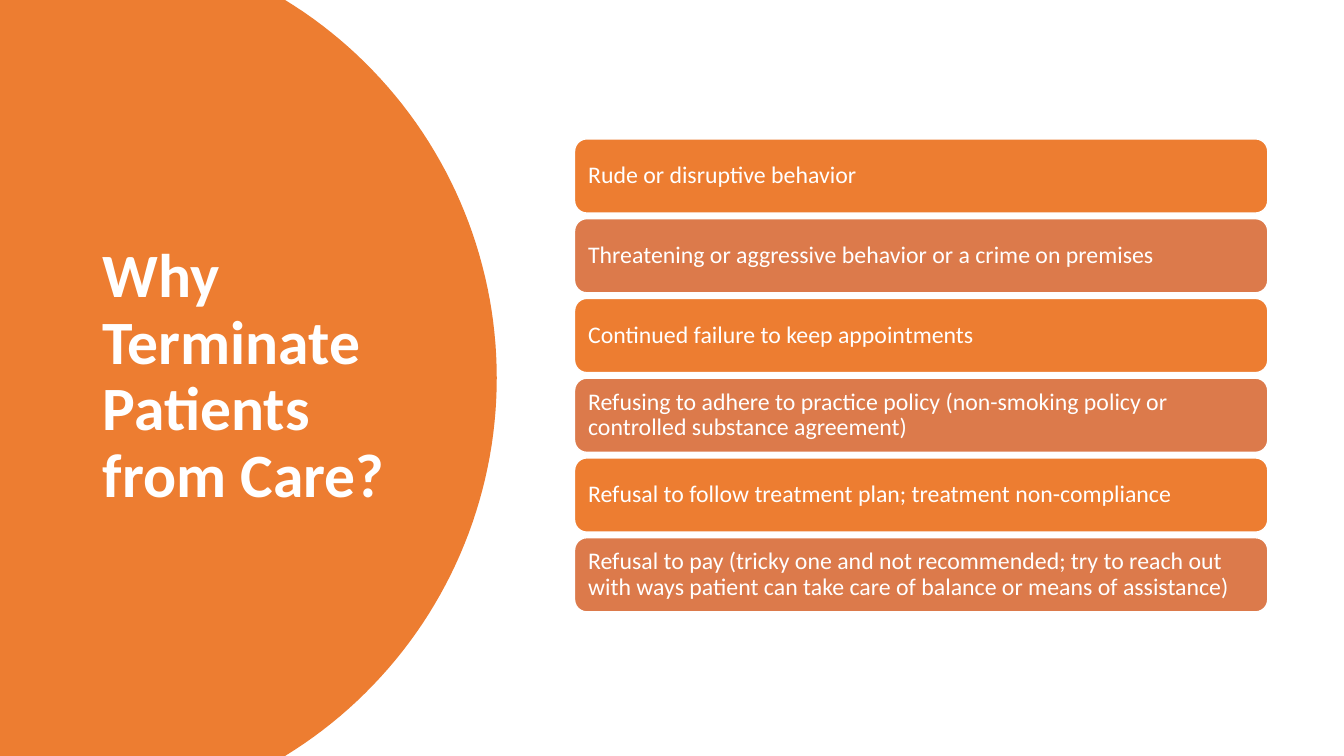
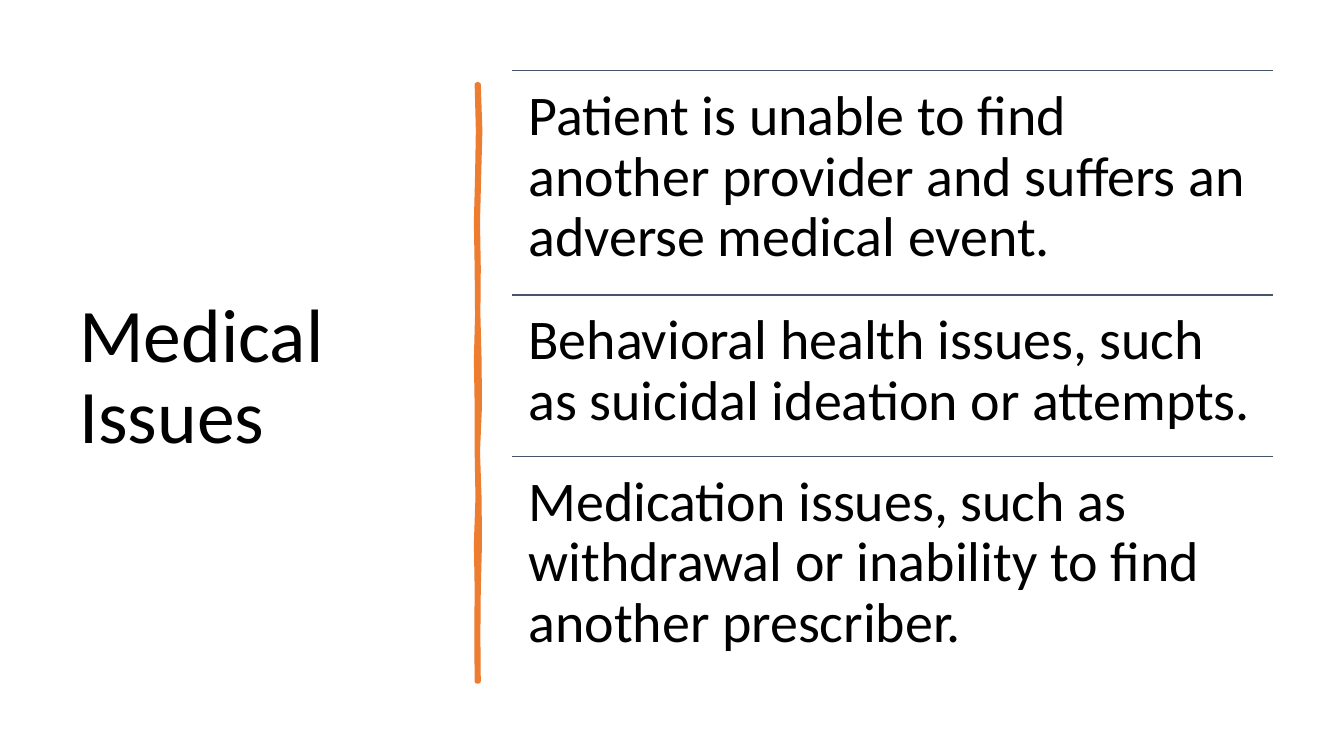
import math

from lxml import etree
from pptx import Presentation
from pptx.dml.color import RGBColor
from pptx.enum.shapes import MSO_CONNECTOR, MSO_SHAPE
from pptx.enum.text import MSO_ANCHOR, PP_ALIGN
from pptx.oxml.ns import qn
from pptx.util import Cm, Pt

ROUNDED = MSO_SHAPE.ROUNDED_RECTANGLE
STRAIGHT = MSO_CONNECTOR.STRAIGHT
MIDDLE, TOP = MSO_ANCHOR.MIDDLE, MSO_ANCHOR.TOP
LEFT = PP_ALIGN.LEFT

FONT = "Calibri"
ORANGE, RUST, SLATE = "ED7D31", "DC7A4B", "44546A"
WHITE, BLACK = "FFFFFF", "000000"
SLIDE_WIDTH, SLIDE_HEIGHT = 33.87, 19.05


def rgb(value):
    return RGBColor.from_string(value)


def write(shape, text, size, color, bold=False, anchor=MIDDLE, inset=(0.25, 0.13)):
    frame = shape.text_frame
    frame.word_wrap = True
    frame.vertical_anchor = anchor
    frame.margin_left = frame.margin_right = Cm(inset[0])
    frame.margin_top = frame.margin_bottom = Cm(inset[1])
    frame.text = text
    para = frame.paragraphs[0]
    para.alignment = LEFT
    para.line_spacing = 0.9
    font = para.runs[0].font
    font.name, font.size, font.bold = FONT, Pt(size), bold
    font.color.rgb = rgb(color)


deck = Presentation()
deck.slide_width, deck.slide_height = Cm(SLIDE_WIDTH), Cm(SLIDE_HEIGHT)
blank = deck.slide_layouts[6]

# Slide 1: orange panel with a circular right edge
page = deck.slides.add_slide(blank)
center_x, center_y, radius = 1.35, SLIDE_HEIGHT / 2, 11.17
half_angle = math.asin(center_y / radius)
steps = 80
arc = []
for step in range(steps + 1):
    angle = half_angle * (2 * step / steps - 1)
    arc.append((Cm(center_x + radius * math.cos(angle)),
                Cm(center_y + radius * math.sin(angle))))
builder = page.shapes.build_freeform(0, 0)
builder.add_line_segments(arc + [(0, Cm(SLIDE_HEIGHT))], close=True)
panel = builder.convert_to_shape()
panel.shadow.inherit = False
panel.fill.solid()
panel.fill.fore_color.rgb = rgb(ORANGE)
panel.line.fill.background()

title = page.shapes.add_textbox(Cm(2.34), Cm(1.78), Cm(8.2), Cm(15.47))
write(title, "Why Terminate Patients from Care?", 44, WHITE, bold=True)

# Reasons in alternating colours
reasons = [
    "Rude or disruptive behavior",
    "Threatening or aggressive behavior or a crime on premises",
    "Continued failure to keep appointments",
    "Refusing to adhere to practice policy (non-smoking policy or controlled substance agreement)",
    "Refusal to follow treatment plan; treatment non-compliance",
    "Refusal to pay (tricky one and not recommended; try to reach out with ways patient can "
    "take care of balance or means of assistance)",
]
for index, reason in enumerate(reasons):
    bar = page.shapes.add_shape(ROUNDED, Cm(14.48), Cm(3.5 + 2.01 * index), Cm(17.47), Cm(1.87))
    bar.shadow.inherit = False
    bar.fill.solid()
    bar.fill.fore_color.rgb = rgb((ORANGE, RUST)[index % 2])
    bar.line.color.rgb = rgb(WHITE)
    bar.line.width = Pt(1)
    write(bar, reason, 17, WHITE)

# Slide 2: title
page = deck.slides.add_slide(blank)
title = page.shapes.add_textbox(Cm(1.75), Cm(1.78), Cm(9.5), Cm(15.52))
write(title, "Medical Issues", 54, BLACK)

# Hand-drawn divider: edge positions at equal steps down the stroke
left_edge = [12.02, 12.05, 12.03, 12, 12.02, 12.03, 12, 12.02, 12.02, 12.04, 12, 12.02, 12.01, 12.02]
right_edge = [12.06, 12.1, 12.07, 12.04, 12.06, 12.05, 12.08, 12.09, 12.04, 12.08, 12.09, 12.06, 12.05, 12.06]
stroke_top, stroke_bottom = 2.13, 17.17
gap = (stroke_bottom - stroke_top) / (len(left_edge) - 1)
down = [(Cm(x), Cm(stroke_top + gap * step)) for step, x in enumerate(right_edge)]
up = [(Cm(x), Cm(stroke_top + gap * step)) for step, x in enumerate(left_edge)][::-1]
builder = page.shapes.build_freeform(*down[0])
builder.add_line_segments(down[1:] + up, close=True)
divider = builder.convert_to_shape()
divider.shadow.inherit = False
divider.fill.solid()
divider.fill.fore_color.rgb = rgb(ORANGE)
divider.line.color.rgb = rgb(ORANGE)
divider.line.width = Pt(3.25)
etree.SubElement(divider.line._get_or_add_ln(), qn("a:round"))

# Issues, each under a thin rule
issues = [
    ("Patient is unable to find another provider and suffers an adverse medical event.", 5.65),
    ("Behavioral health issues, such as suicidal ideation or attempts.", 4.07),
    ("Medication issues, such as withdrawal or inability to find another prescriber.", 5.65),
]
left, width, top = 12.9, 19.18, 1.78
for issue, height in issues:
    rule = page.shapes.add_connector(STRAIGHT, Cm(left), Cm(top), Cm(left + width), Cm(top))
    rule.line.color.rgb = rgb(SLATE)
    rule.line.width = Pt(1)
    etree.SubElement(rule._element.spPr, qn("a:effectLst"))
    box = page.shapes.add_textbox(Cm(left), Cm(top), Cm(width), Cm(height))
    write(box, issue, 40, BLACK, anchor=TOP, inset=(0.42, 0.42))
    top += height

deck.save("out.pptx")
